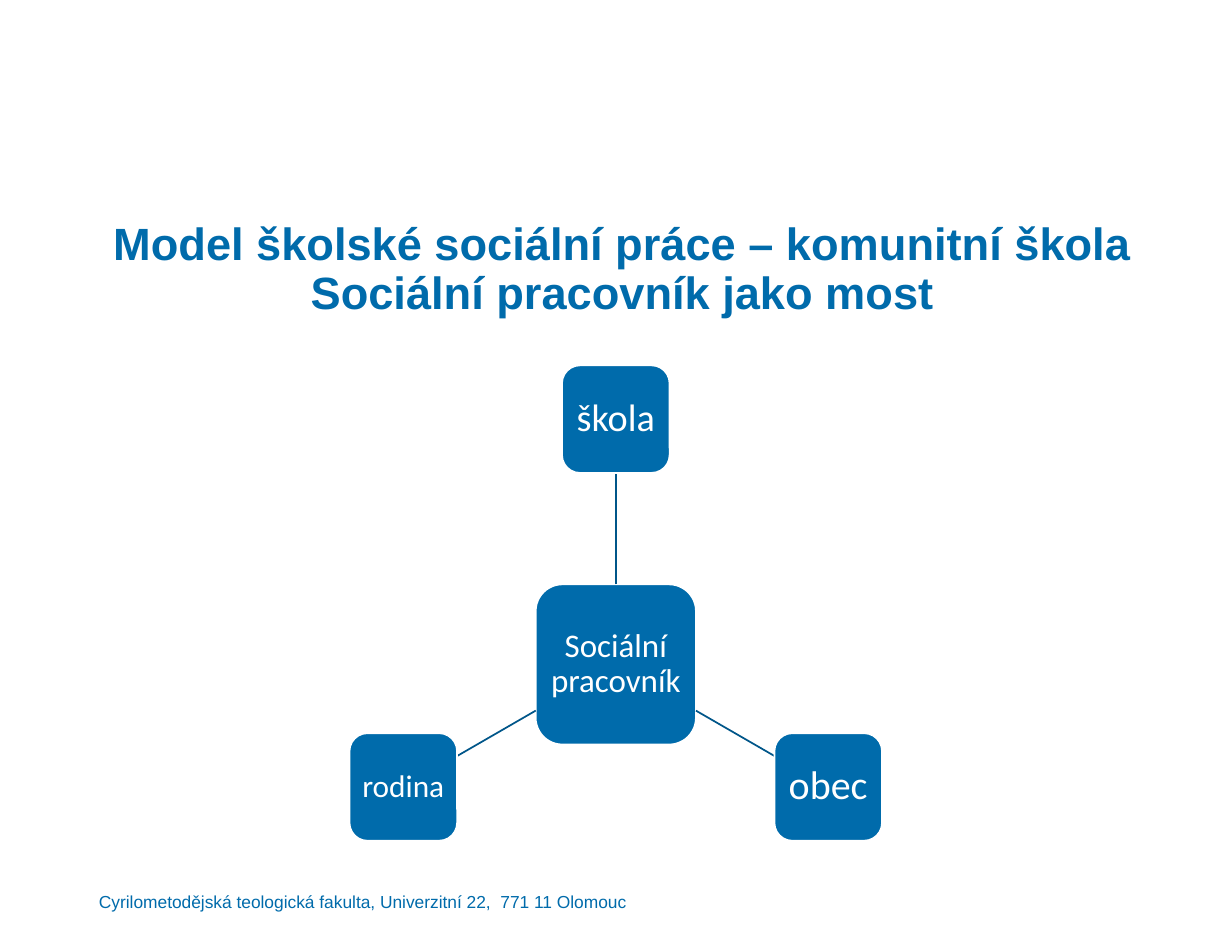
from dataclasses import dataclass
from math import cos, radians, sin

from lxml import etree
from pptx import Presentation
from pptx.dml.color import RGBColor
from pptx.enum.shapes import MSO_CONNECTOR, MSO_SHAPE
from pptx.enum.text import MSO_ANCHOR, PP_ALIGN
from pptx.oxml.ns import qn
from pptx.util import Inches, Pt

ROUND = MSO_SHAPE.ROUNDED_RECTANGLE
LINE = MSO_CONNECTOR.STRAIGHT
MID, TOP, LOW = MSO_ANCHOR.MIDDLE, MSO_ANCHOR.TOP, MSO_ANCHOR.BOTTOM
CENTER, LEFT = PP_ALIGN.CENTER, PP_ALIGN.LEFT

COLORS = {"blue": "006BAB", "dark": "005689", "white": "FFFFFF"}

# The page is 25 by 19 cm
WIDTH, HEIGHT = Inches(25 / 2.54), Inches(19 / 2.54)

# Hub centre, box sides and distance from hub to nodes, in inches
HUB_X, HUB_Y = 4.92, 5.31
HUB_SIDE, NODE_SIDE, REACH = 1.28, 0.86, 1.96


@dataclass
class Node:
    label: str
    size: int
    angle: float


NODES = [Node("škola", 22, -90), Node("obec", 23, 30), Node("rodina", 18, 150)]


def color(name: str) -> RGBColor:
    return RGBColor.from_string(COLORS[name])


def write(shape, text: str, *, size: int, font: str = "Arial",
          ink: str = "blue", bold: bool = False, align=LEFT, anchor=TOP,
          inset: tuple = (0, 0, 0, 0), spacing: float = 1.0) -> None:
    frame = shape.text_frame
    frame.word_wrap = True
    frame.vertical_anchor = anchor
    (frame.margin_left, frame.margin_top,
     frame.margin_right, frame.margin_bottom) = map(Inches, inset)
    frame.text = text
    for par in frame.paragraphs:
        par.alignment = align
        par.line_spacing = spacing
        par.font.size = Pt(size)
        par.font.name = font
        par.font.bold = bold
        par.font.color.rgb = color(ink)


def add_text(slide, box: tuple, text: str, **style) -> None:
    write(slide.shapes.add_textbox(*map(Inches, box)), text, **style)


def point(angle: float, dist: float) -> tuple[float, float]:
    turn = radians(angle)
    return HUB_X + dist * cos(turn), HUB_Y + dist * sin(turn)


def add_box(slide, mid: tuple, side: float, text: str, size: int) -> None:
    x, y = mid
    box = slide.shapes.add_shape(ROUND, Inches(x - side / 2),
                                 Inches(y - side / 2),
                                 Inches(side), Inches(side))
    box.shadow.inherit = False
    box.fill.solid()
    box.fill.fore_color.rgb = color("blue")
    box.line.color.rgb = color("white")
    box.line.width = Pt(1)
    write(box, text, size=size, font="Calibri", ink="white", align=CENTER,
          anchor=MID, inset=(0.05,) * 4, spacing=0.9)


def add_spoke(slide, angle: float) -> None:
    # The line runs from the hub's edge to the node's edge
    turn = radians(angle)
    lean = max(abs(cos(turn)), abs(sin(turn)))
    start = point(angle, HUB_SIDE / 2 / lean)
    end = point(angle, REACH - NODE_SIDE / 2 / lean)
    spoke = slide.shapes.add_connector(LINE, *map(Inches, start + end))
    spoke.line.color.rgb = color("dark")
    spoke.line.width = Pt(1)
    etree.SubElement(spoke._element.spPr, qn("a:effectLst"))


def main() -> None:
    deck = Presentation()
    deck.slide_width, deck.slide_height = WIDTH, HEIGHT
    slide = deck.slides.add_slide(deck.slide_layouts[6])

    # Title
    add_text(slide, (0.79, 1.77, 8.27, 0.82),
             "Model školské sociální práce – komunitní škola\v"
             "Sociální pracovník jako most",
             size=26, bold=True, align=CENTER, spacing=0.9,
             inset=(0.1, 0, 0, 0))

    # Hub with its nodes
    add_box(slide, (HUB_X, HUB_Y), HUB_SIDE, "Sociální pracovník", 19)
    for node in NODES:
        add_spoke(slide, node.angle)
        add_box(slide, point(node.angle, REACH), NODE_SIDE,
                node.label, node.size)

    # Footer
    add_text(slide, (0.79, 7.05, 7.79, 0.24),
             "Cyrilometodějská teologická fakulta, Univerzitní 22,  "
             "771 11 Olomouc", size=10, anchor=LOW)

    deck.save("out.pptx")


if __name__ == "__main__":
    main()
